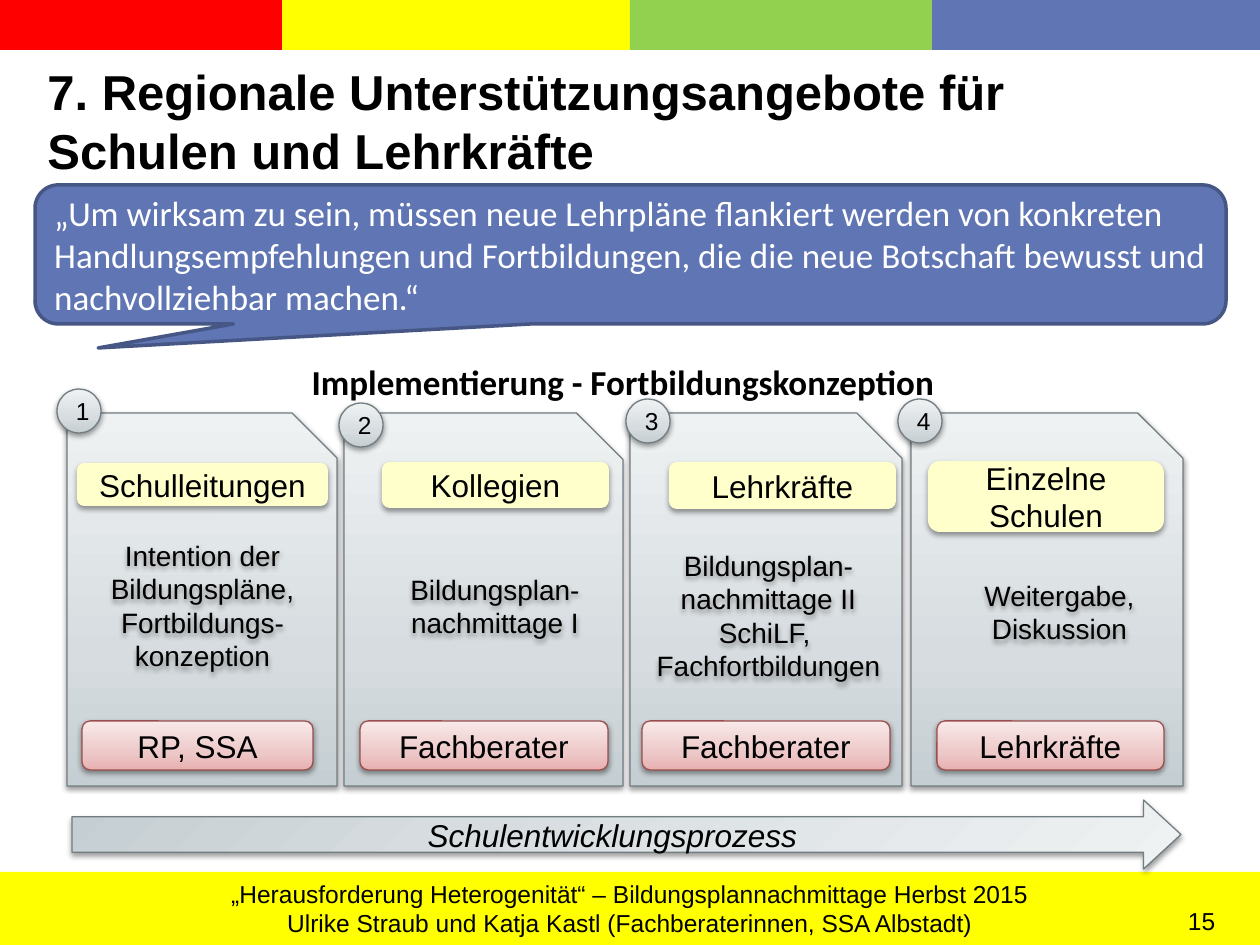
"""Build the slide on regional support offers for schools and teachers."""
from lxml import etree
from pptx import Presentation
from pptx.dml.color import RGBColor
from pptx.enum.shapes import MSO_SHAPE as SHP
from pptx.enum.text import MSO_ANCHOR as ANC, PP_ALIGN as AL
from pptx.oxml import parse_xml
from pptx.util import Pt

PX = 914400 // 126
NS = 'xmlns:a="http://schemas.openxmlformats.org/drawingml/2006/main"'
GREY = ["C5CED2", "D6DCDF", "EFF2F3"]
RED = ["E8B0B0", "EDC8C8", "F9E9E9"]
UP = '<a:lin ang="16200000" scaled="0"/>'
CORNER = '<a:path path="circle"><a:fillToRect r="100000" b="100000"/></a:path>'
SHADOW = (f'<a:effectLst {NS}><a:outerShdw blurRad="39370" dist="20320" dir="5400000" '
          'rotWithShape="0"><a:srgbClr val="000000"><a:alpha val="38000"/>'
          '</a:srgbClr></a:outerShdw></a:effectLst>')

prs = Presentation()
prs.slide_width, prs.slide_height = 9144000, 6858000
slide = prs.slides.add_slide(prs.slide_layouts[6])


def shape(kind, box, fill=None, line=None, width=0.75, shadow=False, grad=UP):
    box = [v * PX for v in box]
    if kind is None:
        s = slide.shapes.add_textbox(*box)
    else:
        s = slide.shapes.add_shape(kind, *box)
        s.shadow.inherit = False
        s.line.fill.background()
    if isinstance(fill, list):
        s.fill.background()
        stops = "".join(f'<a:gs pos="{pos}"><a:srgbClr val="{c}"/></a:gs>'
                        for pos, c in zip((0, 35000, 100000), fill))
        no_fill = s._element.spPr.find("{*}noFill")
        s._element.spPr.replace(no_fill, parse_xml(
            f'<a:gradFill {NS} rotWithShape="1"><a:gsLst>{stops}</a:gsLst>{grad}</a:gradFill>'))
    elif fill:
        s.fill.solid()
        s.fill.fore_color.rgb = RGBColor.from_string(fill)
    if line:
        s.line.color.rgb = RGBColor.from_string(line)
        s.line.width = Pt(width)
    if shadow:
        for old in s._element.spPr.findall("{*}effectLst"):
            s._element.spPr.remove(old)
        s._element.spPr.append(etree.fromstring(SHADOW, s._element.spPr.getroottree().parser))
    return s


def write(s, lines, size, color="000000", font="Arial", align=AL.CENTER,
          anchor=ANC.MIDDLE, bold=False, italic=False):
    tf = s.text_frame
    tf.word_wrap, tf.vertical_anchor = True, anchor
    for i, line in enumerate(lines):
        p = tf.add_paragraph() if i else tf.paragraphs[0]
        p.alignment = align
        for j, part in enumerate(line.split("\n")):
            if j:
                p.add_line_break()
            r = p.add_run()
            r.text = part
            r.font.size, r.font.name = Pt(size), font
            r.font.bold, r.font.italic = bold, italic
            r.font.color.rgb = RGBColor.from_string(color)
    return tf


footer = shape(SHP.RECTANGLE, (0, 872, 1260, 73), "FFFF00")
write(footer, ["„Herausforderung Heterogenität“ – Bildungsplannachmittage Herbst 2015",
               "Ulrike Straub und Katja Kastl (Fachberaterinnen, SSA Albstadt)"], 14)
number = shape(None, (1188, 900, 69, 43))
tf = write(number, ["15"], 14, align=AL.LEFT, anchor=ANC.TOP)
tf.margin_left = tf.margin_right = 0

for left, right, color in [(-5, 287, "FF0000"), (282, 630, "FFFF00"),
                           (932, 1260, "6076B4"), (630, 932, "92D050")]:
    shape(SHP.RECTANGLE, (left, 0, right - left, 50), color)

title = shape(None, (35, 55, 1181, 131))
write(title, ["7. Regionale Unterstützungsangebote für Schulen und Lehrkräfte"], 28,
      align=AL.LEFT, anchor=ANC.TOP, bold=True)

quote = shape(SHP.ROUNDED_RECTANGULAR_CALLOUT, (35, 185, 1191, 139), "6076B4", "475785", 2)
for i, value in enumerate((-0.447, 0.673, 0.167)):
    quote.adjustments[i] = value
write(quote, ["„Um wirksam zu sein, müssen neue Lehrpläne flankiert werden von konkreten "
              "Handlungsempfehlungen und Fortbildungen, die die neue Botschaft bewusst und "
              "nachvollziehbar machen.“"], 20, "FFFFFF", "Calibri", AL.LEFT)

heading = shape(None, (24, 354, 1198, 55))
write(heading, ["Implementierung - Fortbildungskonzeption"], 20, font="Calibri",
      anchor=ANC.TOP, bold=True)

steps = [
    ((67, 270), (57, 389), (77, 463, 251, 43), "Schulleitungen", (67, 532, 271, 149),
     ["Intention der Bildungspläne, Fortbildungs-konzeption"], (82, 231), "RP, SSA"),
    ((344, 279), (339, 403), (382, 462, 227, 46), "Kollegien", (360, 566, 270, 115),
     ["Bildungsplan-\nnachmittage I"], (360, 248), "Fachberater"),
    ((630, 272), (626, 399), (669, 462, 227, 47), "Lehrkräfte", (636, 542, 265, 149),
     ["Bildungsplan-nachmittage II", "SchiLF, ", "Fachfortbildungen"],
     (642, 248), "Fachberater"),
    ((911, 272), (898, 399), (928, 461, 236, 71), "Einzelne Schulen", (927, 572, 265, 81),
     ["Weitergabe,", "Diskussion"], (937, 227), "Lehrkräfte"),
]
for n, (card, badge, label, group, body, lines, actor, who) in enumerate(steps, 1):
    shape(SHP.SNIP_1_RECTANGLE, (card[0], 413, card[1], 373), GREY, "727D82", shadow=True)
    s = shape(SHP.ROUNDED_RECTANGLE, (actor[0], 721, actor[1], 49), RED, "9A4E4E", shadow=True)
    write(s, [who], 18)
    write(shape(SHP.ROUNDED_RECTANGLE, label, "FFFFCC", shadow=True), [group], 18)
    write(shape(None, body, shadow=True), lines, 16, anchor=ANC.TOP)
    s = shape(SHP.OVAL, (*badge, 44, 44), GREY, "727D82", shadow=True)
    write(s, [str(n)], 14)

arrow = shape(SHP.RIGHT_ARROW, (72, 800, 1109, 69), GREY, "727D82", shadow=True, grad=CORNER)
arrow.adjustments[0], arrow.adjustments[1] = 0.515, 0.541
tf = write(arrow, ["Schulentwicklungsprozess "], 18, italic=True)
tf.margin_left = tf.margin_right = tf.margin_top = tf.margin_bottom = 5 * PX

prs.save("out.pptx")
